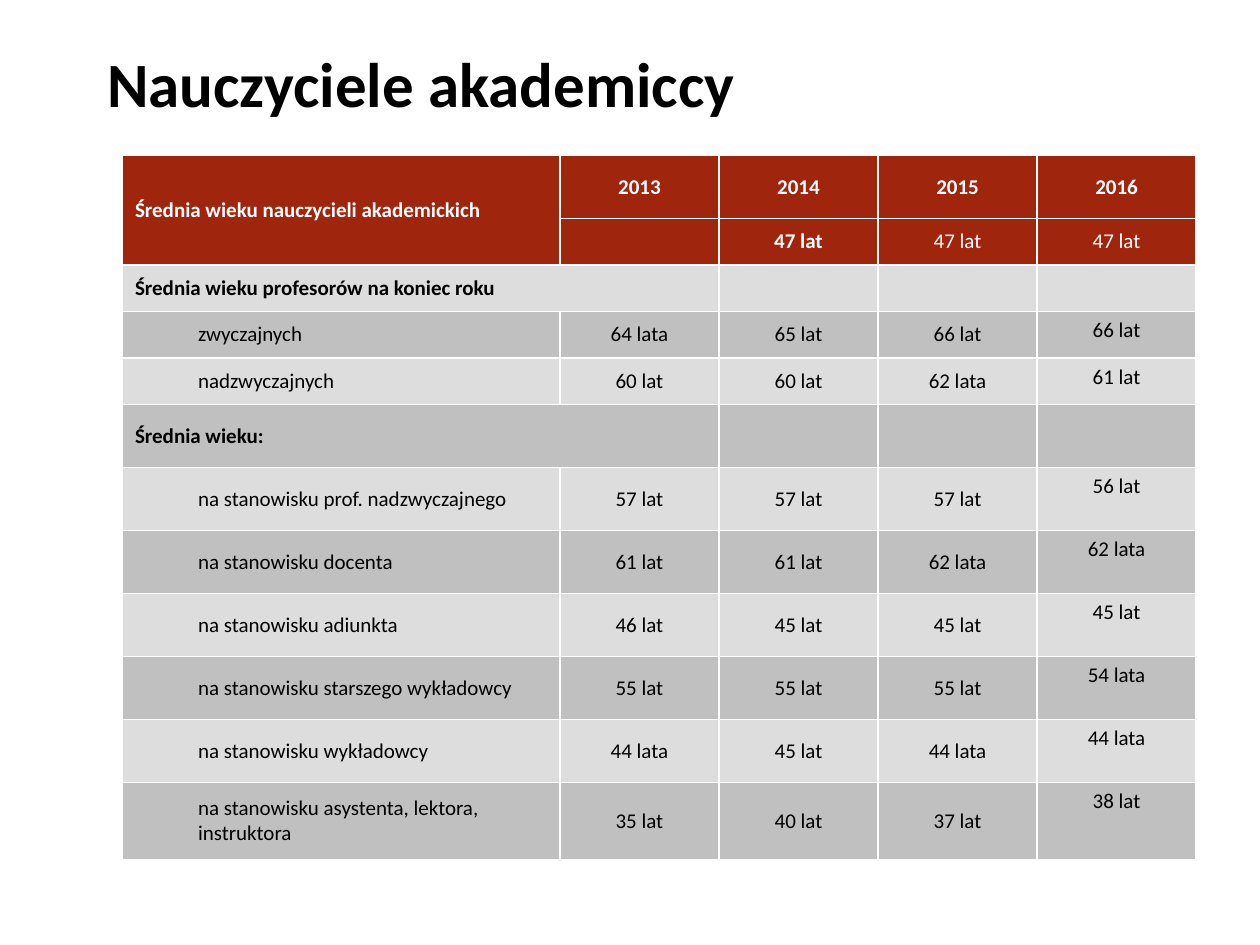
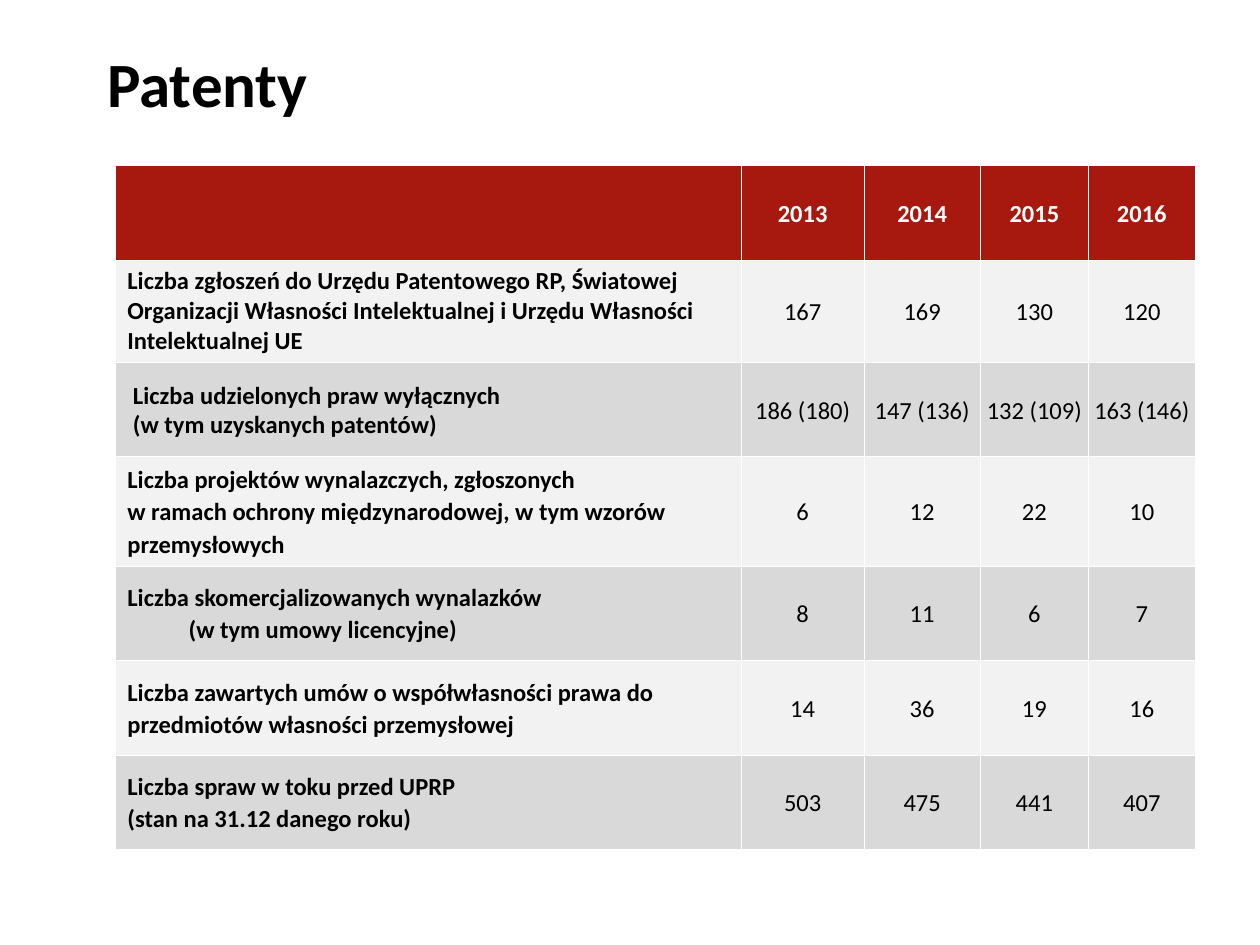
import dataclasses

import pptx
import pptx.dml.color
import pptx.enum.text
import pptx.oxml
import pptx.oxml.ns
import pptx.util

Pt = pptx.util.Pt
RGB = pptx.dml.color.RGBColor.from_string
ALIGN = pptx.enum.text.PP_ALIGN
ANCHOR = pptx.enum.text.MSO_ANCHOR


@dataclasses.dataclass(frozen=True)
class Theme:
    font: str = "Calibri"
    text: str = "000000"
    white: str = "FFFFFF"
    age_head: str = "9F250D"
    age_bands: tuple = ("DDDDDD", "C0C0C0")
    patent_head: str = "A7190E"
    patent_bands: tuple = ("F2F2F2", "D9D9D9")
    title_size: int = 36
    age_size: int = 12
    patent_size: int = 14
    age_border: float = 1
    patent_border: float = 0.23
    plain_style: str = "{2D5ABB26-0587-4C30-8999-92F81FD0307C}"


theme = Theme()


def add_table_slide(title, title_width, left, top, col_widths, row_heights):
    s = prs.slides.add_slide(prs.slide_layouts[5])
    sp = s.shapes.title
    sp.left, sp.top, sp.width, sp.height = Pt(54), Pt(21.6), Pt(title_width), Pt(72.7)
    tf = sp.text_frame
    tf.text = title
    tf.word_wrap = True
    tf.auto_size = pptx.enum.text.MSO_AUTO_SIZE.NONE
    tf.vertical_anchor = ANCHOR.TOP
    p = tf.paragraphs[0]
    p.alignment = ALIGN.LEFT
    p.font.name, p.font.size, p.font.bold = theme.font, Pt(theme.title_size), True
    p.font.color.rgb = RGB(theme.text)
    gf = s.shapes.add_table(len(row_heights), len(col_widths), Pt(left), Pt(top),
                            Pt(sum(col_widths)), Pt(sum(row_heights)))
    tbl = gf.table
    tbl.first_row = tbl.horz_banding = False
    tbl._tbl.tblPr.find(pptx.oxml.ns.qn("a:tableStyleId")).text = theme.plain_style
    for col, width in zip(tbl.columns, col_widths):
        col.width = Pt(width)
    for row, height in zip(tbl.rows, row_heights):
        row.height = Pt(height)
    return tbl


def fill_cell(cell, text, fill, color, size, border, bold=False, align=ALIGN.LEFT,
              anchor=ANCHOR.MIDDLE, indents=(0,), spacing=None):
    cell.text = text
    cell.vertical_anchor = anchor
    tc_pr = cell._tc.get_or_add_tcPr()
    for side in ("lnL", "lnR", "lnT", "lnB"):
        tc_pr.append(pptx.oxml.parse_xml(
            f'<a:{side} {pptx.oxml.ns.nsdecls("a")} w="{int(Pt(border))}"><a:solidFill>'
            f'<a:srgbClr val="{theme.white}"/></a:solidFill></a:{side}>'))
    cell.fill.solid()
    cell.fill.fore_color.rgb = RGB(fill)
    for i, p in enumerate(cell.text_frame.paragraphs):
        indent = indents[min(i, len(indents) - 1)]
        if indent:
            p_pr = p._p.get_or_add_pPr()
            p_pr.set("marL", str(int(Pt(indent))))
            p_pr.set("indent", "0")
        p.alignment = align
        if spacing:
            p.line_spacing = spacing
        p.font.name, p.font.size, p.font.bold = theme.font, Pt(size), bold
        p.font.color.rgb = RGB(color)


prs = pptx.Presentation()
prs.slide_width, prs.slide_height = Pt(720), Pt(540)

age_rows = [
    ("Średnia wieku nauczycieli akademickich", "2013", "2014", "2015", "2016"),
    ("", "", "47 lat", "47 lat", "47 lat"),
    ("Średnia wieku profesorów na koniec roku", "", "", "", ""),
    ("zwyczajnych", "64 lata", "65 lat", "66 lat", "66 lat"),
    ("nadzwyczajnych", "60 lat", "60 lat", "62 lata", "61 lat"),
    ("Średnia wieku:", "", "", "", ""),
    ("na stanowisku prof. nadzwyczajnego", "57 lat", "57 lat", "57 lat", "56 lat"),
    ("na stanowisku docenta", "61 lat", "61 lat", "62 lata", "62 lata"),
    ("na stanowisku adiunkta", "46 lat", "45 lat", "45 lat", "45 lat"),
    ("na stanowisku starszego wykładowcy", "55 lat", "55 lat", "55 lat", "54 lata"),
    ("na stanowisku wykładowcy", "44 lata", "45 lat", "44 lata", "44 lata"),
    ("na stanowisku asystenta, lektora, instruktora", "35 lat", "40 lat", "37 lat", "38 lat"),
]
tbl = add_table_slide("Nauczyciele akademiccy", 630, 70, 88.8, [250] + [90.9] * 4,
                      [36] + [26.6] * 4 + [36] * 6 + [44])
group_rows = (2, 5)
for r, values in enumerate(age_rows):
    head = r < 2
    for c, value in enumerate(values):
        detail = not head and r not in group_rows
        fill_cell(tbl.cell(r, c), value,
                  theme.age_head if head else theme.age_bands[r % 2],
                  theme.white if head else theme.text,
                  theme.age_size, theme.age_border,
                  bold=r == 0 or r in group_rows or (r, c) == (1, 2),
                  align=ALIGN.CENTER if c else ALIGN.LEFT,
                  anchor=ANCHOR.TOP if detail and c == 4 else ANCHOR.MIDDLE,
                  indents=(36,) if detail and c == 0 else (0,))
tbl.cell(0, 0).merge(tbl.cell(1, 0))
for r in group_rows:
    tbl.cell(r, 0).merge(tbl.cell(r, 1))

patent_rows = [
    ("", "2013", "2014", "2015", "2016"),
    ("Liczba zgłoszeń do Urzędu Patentowego RP, Światowej Organizacji Własności "
     "Intelektualnej i Urzędu Własności Intelektualnej UE", "167", "169", "130", "120"),
    ("Liczba udzielonych praw wyłącznych\n(w tym uzyskanych patentów)",
     "186 (180)", "147 (136)", "132 (109)", "163 (146)"),
    ("Liczba projektów wynalazczych, zgłoszonych\vw ramach ochrony międzynarodowej, "
     "w tym wzorów przemysłowych", "6", "12", "22", "10"),
    ("Liczba skomercjalizowanych wynalazków\n(w tym umowy licencyjne)", "8", "11", "6", "7"),
    ("Liczba zawartych umów o współwłasności prawa do przedmiotów własności przemysłowej",
     "14", "36", "19", "16"),
    ("Liczba spraw w toku przed UPRP\n(stan na 31.12 danego roku)", "503", "475", "441", "407"),
]
tbl = add_table_slide("Patenty", 666, 65.6, 94.6, [358.2, 69.8, 66.8, 61.5, 61.3], [54] * 7)
tight_row = 2
label_indents = {2: (9,), 4: (0, 35)}
for r, values in enumerate(patent_rows):
    for c, value in enumerate(values):
        cell = tbl.cell(r, c)
        fill_cell(cell, value,
                  theme.patent_bands[(r - 1) % 2] if r else theme.patent_head,
                  theme.text if r else theme.white,
                  theme.patent_size, theme.patent_border,
                  bold=r == 0 or c == 0,
                  align=ALIGN.CENTER if c else ALIGN.LEFT,
                  indents=(0,) if c else label_indents.get(r, (0,)),
                  spacing=None if r == tight_row or (r, c) == (1, 0) else 1.08)
        if r == tight_row:
            cell.margin_left = cell.margin_right = cell.margin_top = Pt(1.4)
            cell.margin_bottom = 0

prs.save("out.pptx")
